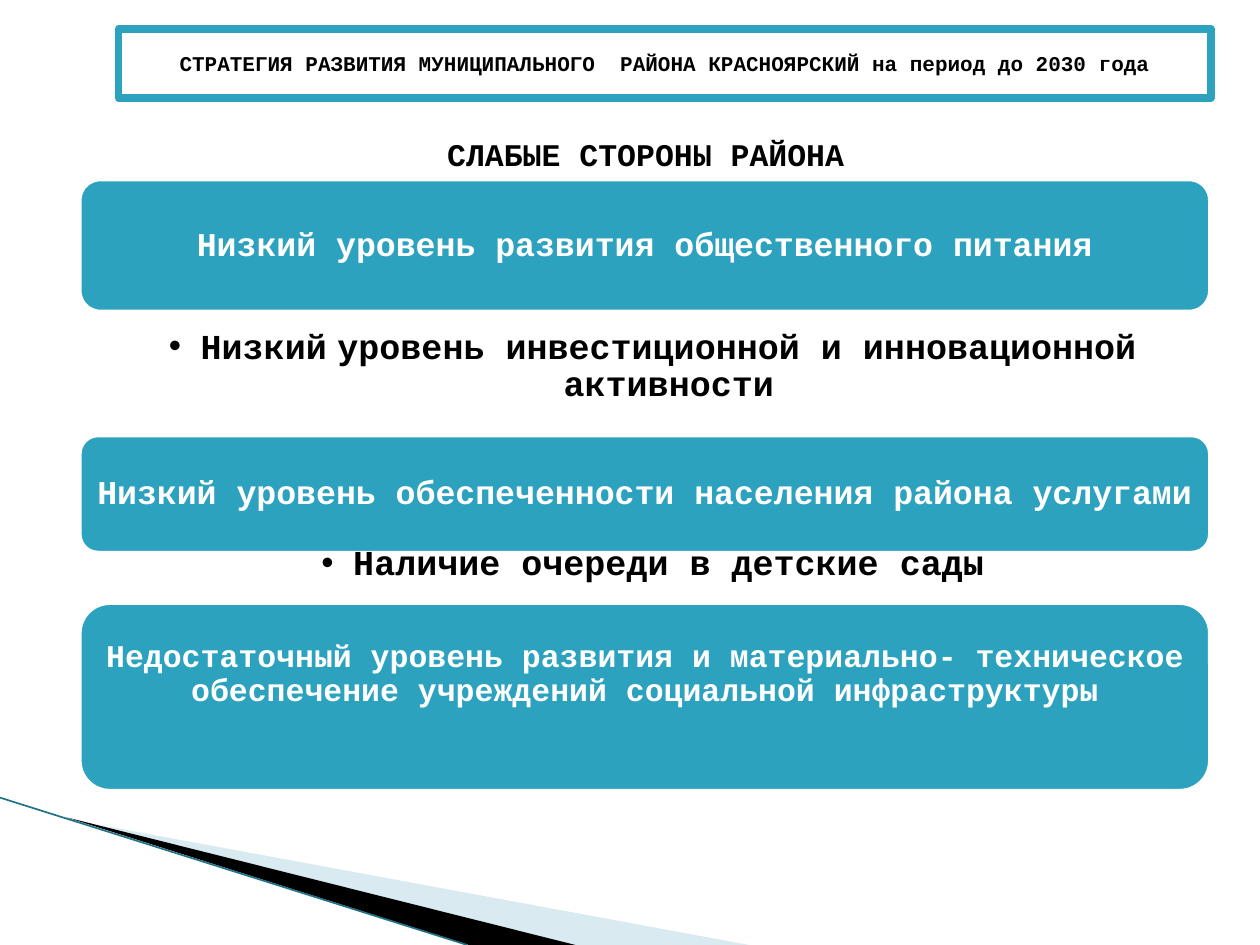
from lxml.etree import SubElement
from pptx import Presentation
from pptx.dml.color import RGBColor
from pptx.enum.shapes import MSO_CONNECTOR, MSO_SHAPE
from pptx.enum.text import MSO_ANCHOR, PP_ALIGN
from pptx.oxml.ns import qn
from pptx.util import Cm, Pt

COLORS = {
    "teal": "2DA2BF",
    "dark_teal": "1F7388",
    "pale": "A0CBDC",
    "black": "000000",
    "white": "FFFFFF",
}
LEFT, WIDTH = 1.57, 22.86


def color(name):
    return RGBColor.from_string(COLORS[name])


class StrategySlide:
    """Holds the style and the current slide of the district strategy."""

    font_name = "Courier New"
    border = Pt(4.33)

    def __init__(self, slide):
        self.slide = slide

    def fill_text(self, shape, runs, insets, anchor=MSO_ANCHOR.TOP, wrap=True):
        frame = shape.text_frame
        frame.word_wrap = wrap
        frame.vertical_anchor = anchor
        (frame.margin_left, frame.margin_top,
         frame.margin_right, frame.margin_bottom) = map(Cm, insets)
        paragraph = frame.paragraphs[0]
        paragraph.alignment = PP_ALIGN.CENTER
        for wording, size in runs:
            run = paragraph.add_run()
            run.text = wording
            if len(runs) > 1:
                run.font.size = Pt(size)
        return paragraph

    def style(self, paragraph, ink, size):
        paragraph.font.name = self.font_name
        paragraph.font.size = Pt(size)
        paragraph.font.bold = True
        paragraph.font.color.rgb = color(ink)

    def box(self, kind, place, fill, line, text, size, ink, insets):
        shape = self.slide.shapes.add_shape(kind, *map(Cm, place))
        shape.shadow.inherit = False
        shape.fill.solid()
        shape.fill.fore_color.rgb = color(fill)
        shape.line.color.rgb = color(line)
        shape.line.width = self.border
        paragraph = self.fill_text(shape, [(text, size)], insets, MSO_ANCHOR.MIDDLE)
        self.style(paragraph, ink, size)
        return paragraph

    def banner(self, place, text):
        self.box(MSO_SHAPE.RECTANGLE, place, "white", "teal", text, 12, "black",
                 (0.25, 0.13, 0.25, 0.13))

    def panel(self, top, height, text, size, bottom_inset=0.2):
        paragraph = self.box(MSO_SHAPE.ROUNDED_RECTANGLE, (LEFT, top, WIDTH, height),
                             "teal", "white", text, size, "white",
                             (0.05, 0.2, 0.05, bottom_inset))
        paragraph.line_spacing = 0.9

    def heading(self, place, text):
        label = self.slide.shapes.add_textbox(*map(Cm, place))
        paragraph = self.fill_text(label, [(text, 18)], (0.25, 0.13, 0.25, 0.13),
                                   wrap=False)
        self.style(paragraph, "black", 18)

    def bullet(self, top, height, runs):
        item = self.slide.shapes.add_textbox(Cm(LEFT), Cm(top), Cm(WIDTH), Cm(height))
        paragraph = self.fill_text(item, runs, (0.74, 0.08, 0.41, 0.08))
        paragraph.line_spacing = 0.9
        properties = paragraph._p.get_or_add_pPr()
        properties.set("marL", str(Cm(0.64)))
        properties.set("indent", str(-Cm(0.64)))
        SubElement(properties, qn("a:buFont"), typeface="Arial")
        SubElement(properties, qn("a:buChar"), char="•")
        self.style(paragraph, "black", 20)

    def wedge(self, corners, fill, opacity=100):
        start, *others = [(Cm(x), Cm(y)) for x, y in corners]
        builder = self.slide.shapes.build_freeform(*start)
        builder.add_line_segments(others, close=True)
        shape = builder.convert_to_shape()
        shape.shadow.inherit = False
        shape.fill.solid()
        shape.fill.fore_color.rgb = color(fill)
        shape.line.fill.background()
        if opacity < 100:
            tint = shape._element.spPr.find(qn("a:solidFill"))[0]
            SubElement(tint, qn("a:alpha"), val=str(opacity * 1000))

    def edge(self, start, end):
        line = self.slide.shapes.add_connector(
            MSO_CONNECTOR.STRAIGHT, *map(Cm, start + end))
        line.line.color.rgb = color("dark_teal")
        line.line.width = Pt(0.95)
        SubElement(line._element.spPr, qn("a:effectLst"))


def main():
    deck = Presentation()
    deck.slide_width, deck.slide_height = Cm(25.4), Cm(19.05)
    page = StrategySlide(deck.slides.add_slide(deck.slide_layouts[6]))

    page.wedge([(1.4, 16.52), (15.1, 19.05), (11.58, 19.05)], "pale", 40)
    page.wedge([(1.35, 16.48), (11.6, 19.05), (9.45, 19.05)], "black")
    page.edge((0, 16.08), (9.42, 19.05))

    page.banner((2.39, 0.58, 22.02, 1.4),
                "СТРАТЕГИЯ РАЗВИТИЯ МУНИЦИПАЛЬНОГО  РАЙОНА КРАСНОЯРСКИЙ на период до 2030 года")
    page.heading((8.33, 2.59, 9.37, 1.02), "СЛАБЫЕ СТОРОНЫ РАЙОНА")

    page.panel(3.58, 2.74, "Низкий уровень развития общественного питания", 19)
    page.bullet(6.55, 0.94, [
        ("Низкий", 20), (" ", 10),
        ("уровень инвестиционной и инновационной активности", 20)])
    page.panel(8.74, 2.44, "Низкий уровень обеспеченности населения района услугами", 19)
    page.bullet(10.92, 1.12, [("Наличие очереди в детские сады", 20)])
    page.panel(12.12, 3.86,
               "Недостаточный уровень развития и материально- техническое "
               "обеспечение учреждений социальной инфраструктуры", 18, 1.1)

    deck.save("out.pptx")


if __name__ == "__main__":
    main()
